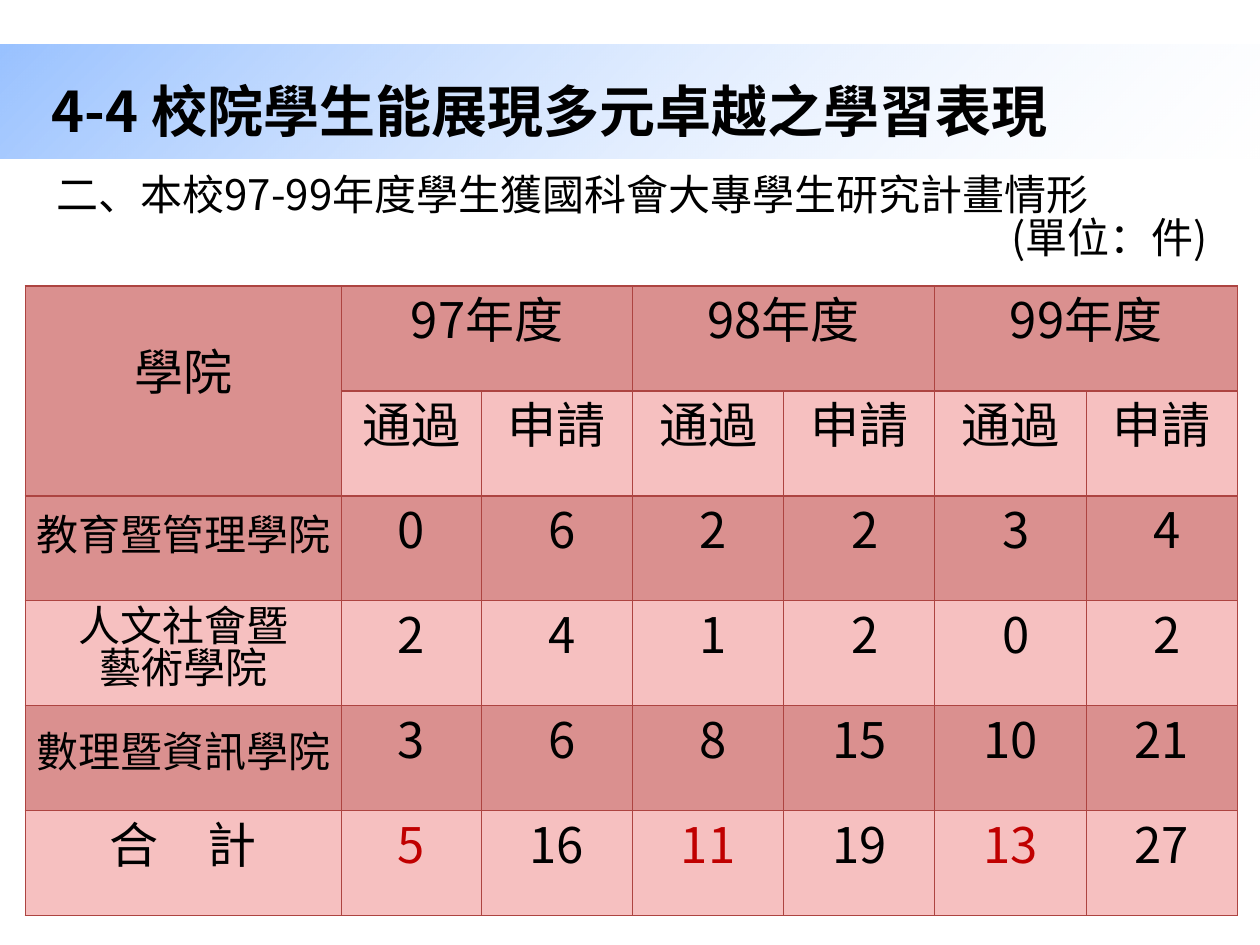
from dataclasses import dataclass

from lxml import etree
from pptx import Presentation, util as u
from pptx.dml.color import RGBColor
from pptx.enum import shapes, text
from pptx.oxml import ns, parse_xml


@dataclass(frozen=True)
class Theme:
    font: str = "Noto Sans CJK SC"
    ink: str = "000000"
    accent: str = "C00000"
    dark: str = "DA908F"
    light: str = "F6C0C0"
    border: str = "AD4441"
    banner: str = "5E9EFF"
    white: str = "FFFFFF"
    title: int = 32
    body: int = 24
    table: int = 28


THEME = Theme()
CENTER, RIGHT = text.PP_ALIGN.CENTER, text.PP_ALIGN.RIGHT
COLUMN_WIDTHS = [2.51, 1.11] + [1.2] * 5
YEARS = ["97年度", "98年度", "99年度"]
ROWS = [
    ["學院", YEARS[0], "", YEARS[1], "", YEARS[2], ""],
    [""] + ["通過", "申請"] * 3,
    ["教育暨管理學院", "0", " 6", " 2", " 2", " 3", " 4"],
    ["人文社會暨\n藝術學院", "2", " 4", " 1", " 2", " 0", " 2"],
    ["數理暨資訊學院", "3", " 6", " 8", "15", "10", "21"],
    ["合　計", "5", "16", "11", "19", "13", "27"],
]
TOTAL_ROW = len(ROWS) - 1


def set_values(target, values):
    for name, value in values.items():
        setattr(target, name, value)


def write(frame, lines, size, color=THEME.ink, bold=False, formats=None):
    """Write one paragraph per line; formats holds a dict for each line."""
    for index, line in enumerate(lines):
        para = frame.paragraphs[0] if index == 0 else frame.add_paragraph()
        set_values(para, formats[index] if formats else {})
        span = para.add_run()
        span.text = line
        set_values(span.font, {"name": THEME.font, "size": u.Pt(size), "bold": bold})
        span.font.color.rgb = RGBColor.from_string(color)
        # East Asian characters take their font from a separate element
        east = etree.SubElement(span.font._element, ns.qn("a:ea"))
        east.set("typeface", THEME.font)


def add_text(page, area, lines, size, **options):
    box = page.shapes.add_textbox(*map(u.Inches, area))
    set_values(box.text_frame, {"word_wrap": True,
                                "vertical_anchor": text.MSO_ANCHOR.MIDDLE})
    write(box.text_frame, lines, size, **options)


def add_banner(page, area):
    banner = page.shapes.add_shape(shapes.MSO_SHAPE.RECTANGLE, *map(u.Inches, area))
    banner.shadow.inherit = False
    banner.line.fill.background()
    # Radial fade from the bottom right corner, with transparency
    stops = "".join(
        f'<a:gs pos="{place}"><a:srgbClr val="{color}"><a:alpha val="{alpha}"/>'
        f'</a:srgbClr></a:gs>'
        for place, color, alpha in [(0, THEME.white, 15000), (100000, THEME.banner, 63000)])
    gradient = parse_xml(
        f'<a:gradFill {ns.nsdecls("a")} rotWithShape="1"><a:gsLst>{stops}</a:gsLst>'
        '<a:path path="circle"><a:fillToRect l="100000" t="100000"/></a:path></a:gradFill>')
    banner._element.spPr.find(ns.qn("a:prstGeom")).addnext(gradient)


def add_borders(cell):
    properties = cell._tc.get_or_add_tcPr()
    for index, edge in enumerate(["lnL", "lnR", "lnT", "lnB"]):
        properties.insert(index, parse_xml(
            f'<a:{edge} {ns.nsdecls("a")} w="{u.Pt(0.75)}"><a:solidFill>'
            f'<a:srgbClr val="{THEME.border}"/></a:solidFill></a:{edge}>'))


def format_cell(cell, row, column, words):
    is_college = column == 0 and 2 <= row < TOTAL_ROW
    is_dark = row % 2 == 0 or (row, column) == (1, 0)
    is_passed_total = row == TOTAL_ROW and column % 2 == 1
    set_values(cell, {"margin_left": u.Inches(0.02), "margin_right": u.Inches(0.02),
                      "margin_top": 0, "margin_bottom": 0,
                      "vertical_anchor": text.MSO_ANCHOR.MIDDLE})
    cell.fill.solid()
    cell.fill.fore_color.rgb = RGBColor.from_string(THEME.dark if is_dark else THEME.light)
    add_borders(cell)
    if words:
        lines = words.split("\n")
        spacing = u.Pt(24 if is_college and row > 2 else 16)
        write(cell.text_frame, lines, THEME.body if is_college else THEME.table,
              THEME.accent if is_passed_total else THEME.ink,
              formats=[{"alignment": CENTER, "line_spacing": spacing}] * len(lines))


def add_results(page, area):
    table = page.shapes.add_table(len(ROWS), len(COLUMN_WIDTHS),
                                  *map(u.Inches, area)).table
    set_values(table, {"first_row": False, "horz_banding": False})
    for column, width in zip(table.columns, COLUMN_WIDTHS):
        column.width = u.Inches(width)
    # Heading spans: the college cell and one cell per year
    table.cell(0, 0).merge(table.cell(1, 0))
    for left in (1, 3, 5):
        table.cell(0, left).merge(table.cell(0, left + 1))
    for row, values in enumerate(ROWS):
        for column, words in enumerate(values):
            format_cell(table.cell(row, column), row, column, words)


def main():
    deck = Presentation()
    set_values(deck, {"slide_width": u.Inches(10), "slide_height": u.Inches(7.5)})
    page = deck.slides.add_slide(deck.slide_layouts[6])

    # Heading band and subtitle
    add_banner(page, (0, 0.35, 10, 0.91))
    add_text(page, (0.35, 1.39, 9.41, 0.7),
             ["二、本校97-99年度學生獲國科會大專學生研究計畫情形", "(單位：件) "], THEME.body,
             formats=[{"line_spacing": 0.84}, {"line_spacing": 0.84, "alignment": RIGHT}])

    # Results by college and year
    add_results(page, (0.2, 2.27, 9.62, 5))

    # Title
    add_text(page, (0.31, 0.68, 9.14, 0.39),
             ["4-4 校院學生能展現多元卓越之學習表現"], THEME.title, bold=True)
    deck.save("out.pptx")


if __name__ == "__main__":
    main()
